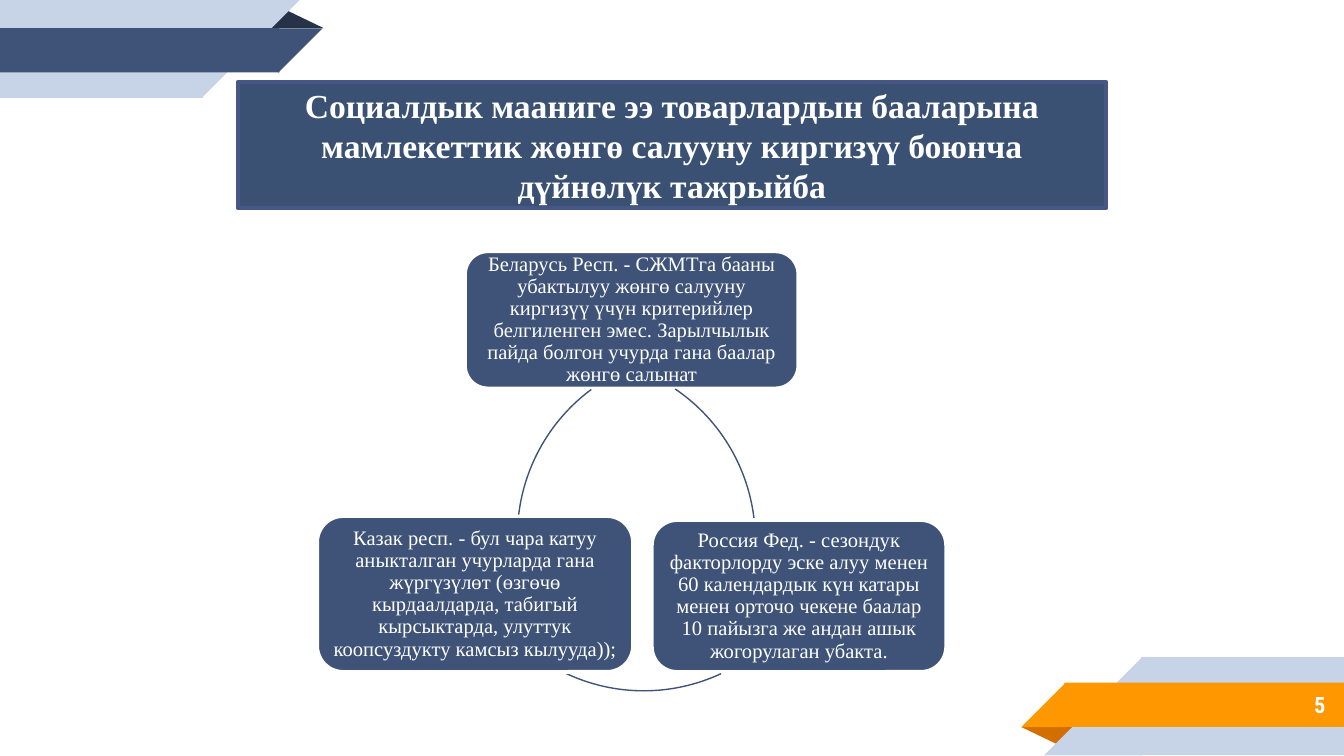
from pptx import Presentation
from pptx.dml.color import RGBColor
from pptx.enum.shapes import MSO_SHAPE
from pptx.enum.text import MSO_ANCHOR, PP_ALIGN
from pptx.util import Inches, Pt

RECTANGLE = MSO_SHAPE.RECTANGLE
ROUNDED = MSO_SHAPE.ROUNDED_RECTANGLE
TRIANGLE = MSO_SHAPE.ISOSCELES_TRIANGLE
RIGHT_TRIANGLE = MSO_SHAPE.RIGHT_TRIANGLE
ARC = MSO_SHAPE.ARC
MIDDLE = MSO_ANCHOR.MIDDLE
CENTER = PP_ALIGN.CENTER
RIGHT = PP_ALIGN.RIGHT

COLORS = {
    "white": "FFFFFF",
    "navy": "3F5378",
    "dark": "263248",
    "pale": "C7D3E6",
    "orange": "FF9800",
    "rust": "D26F00",
    "title": "3A5173",
    "border": "475785",
}
SERIF = "Times New Roman"

presentation = Presentation()
presentation.slide_width = Inches(10)
presentation.slide_height = Inches(10 * 9 / 16)
slide = presentation.slides.add_slide(presentation.slide_layouts[6])


def add_shape(kind, box, fill=None, line=None, width=1):
    shape = slide.shapes.add_shape(kind, *[Inches(value) for value in box])
    shape.shadow.inherit = False
    if fill:
        shape.fill.solid()
        shape.fill.fore_color.rgb = RGBColor.from_string(COLORS[fill])
    else:
        shape.fill.background()
    if line:
        shape.line.color.rgb = RGBColor.from_string(COLORS[line])
        shape.line.width = Pt(width)
    else:
        shape.line.fill.background()
    return shape


def write_text(shape, text, size, font=SERIF, bold=False, align=CENTER, inset=0.05, spacing=1.0):
    frame = shape.text_frame
    frame.word_wrap = True
    frame.vertical_anchor = MIDDLE
    frame.margin_left = frame.margin_right = Inches(inset)
    frame.margin_top = frame.margin_bottom = Inches(0.05)
    paragraph = frame.paragraphs[0]
    paragraph.alignment = align
    paragraph.line_spacing = spacing
    run = paragraph.add_run()
    run.text = text
    run.font.size = Pt(size)
    run.font.name = font
    run.font.bold = bold
    run.font.color.rgb = RGBColor.from_string(COLORS["white"])


ribbons = [
    (180, "dark", (1.98, 0.07, 0.43, 0.14), [
        ("pale", (0, 0, 1.51, 0.73), 1.5),
        ("navy", (0, 0.21, 2.08, 0.33), 2.07),
    ]),
    (0, "rust", (7.6, 5.41, 0.43, 0.14), [
        ("pale", (8.49, 4.89, 1.51, 0.73), 7.77),
        ("orange", (7.92, 5.08, 2.08, 0.33), 7.6),
    ]),
]
for rotation, fold_color, fold_box, bands in ribbons:
    fold = add_shape(TRIANGLE, fold_box, fold_color)
    fold.adjustments[0] = 0.324
    fold.rotation = 180 - rotation
    for color, band_box, tip_left in bands:
        add_shape(RECTANGLE, band_box, color)
        top, height = band_box[1], band_box[3]
        tip = add_shape(RIGHT_TRIANGLE, (tip_left, top, height, height), color)
        tip.rotation = rotation
        tip._element.spPr.xfrm.set("flipH", "1")

page_number = slide.shapes.add_textbox(Inches(8.33), Inches(5.07), Inches(1.63), Inches(0.35))
write_text(page_number, "5", 12, font="Roboto Condensed", bold=True, align=RIGHT, inset=0.1)

title = add_shape(RECTANGLE, (1.77, 0.61, 6.46, 0.94), "title", "border", 2.25)
write_text(
    title,
    "Социалдык мааниге ээ товарлардын бааларына мамлекеттик жөнгө салууну "
    "киргизүү боюнча дүйнөлүк тажрыйба",
    18, bold=True, inset=0.1,
)

countries = [
    ((3.46, 1.87, 2.48, 1.02),
     "Беларусь Респ. - СЖМТга бааны убактылуу жөнгө салууну киргизүү үчүн критерийлер "
     "белгиленген эмес. Зарылчылык пайда болгон учурда гана баалар жөнгө салынат",
     (2.9, 2.66), (304.2, 353.2)),
    ((4.85, 3.87, 2.19, 1.13),
     "Россия Фед. - сезондук факторлорду эске алуу менен 60 календардык күн катары "
     "менен орточо чекене баалар 10 пайызга же андан ашык жогорулаган убакта.",
     (3.43, 2.42), (65, 115.8)),
    ((2.36, 3.84, 2.35, 1.16),
     "Казак респ. - бул чара катуу аныкталган учурларда гана жүргүзүлөт (өзгөчө "
     "кырдаалдарда, табигый кырсыктарда, улуттук коопсуздукту камсыз кылууда));",
     (3.85, 2.63), (186.8, 233.4)),
]
CIRCLE = 2.72
ARC_UNITS_PER_DEGREE = 0.6
for card_box, text, circle_corner, angles in countries:
    card = add_shape(ROUNDED, card_box, "navy", "white", 2)
    write_text(card, text, 11, spacing=0.9)
    arc = add_shape(ARC, (*circle_corner, CIRCLE, CIRCLE), line="navy", width=0.75)
    for index, angle in enumerate(angles):
        arc.adjustments[index] = angle * ARC_UNITS_PER_DEGREE

presentation.save("out.pptx")
